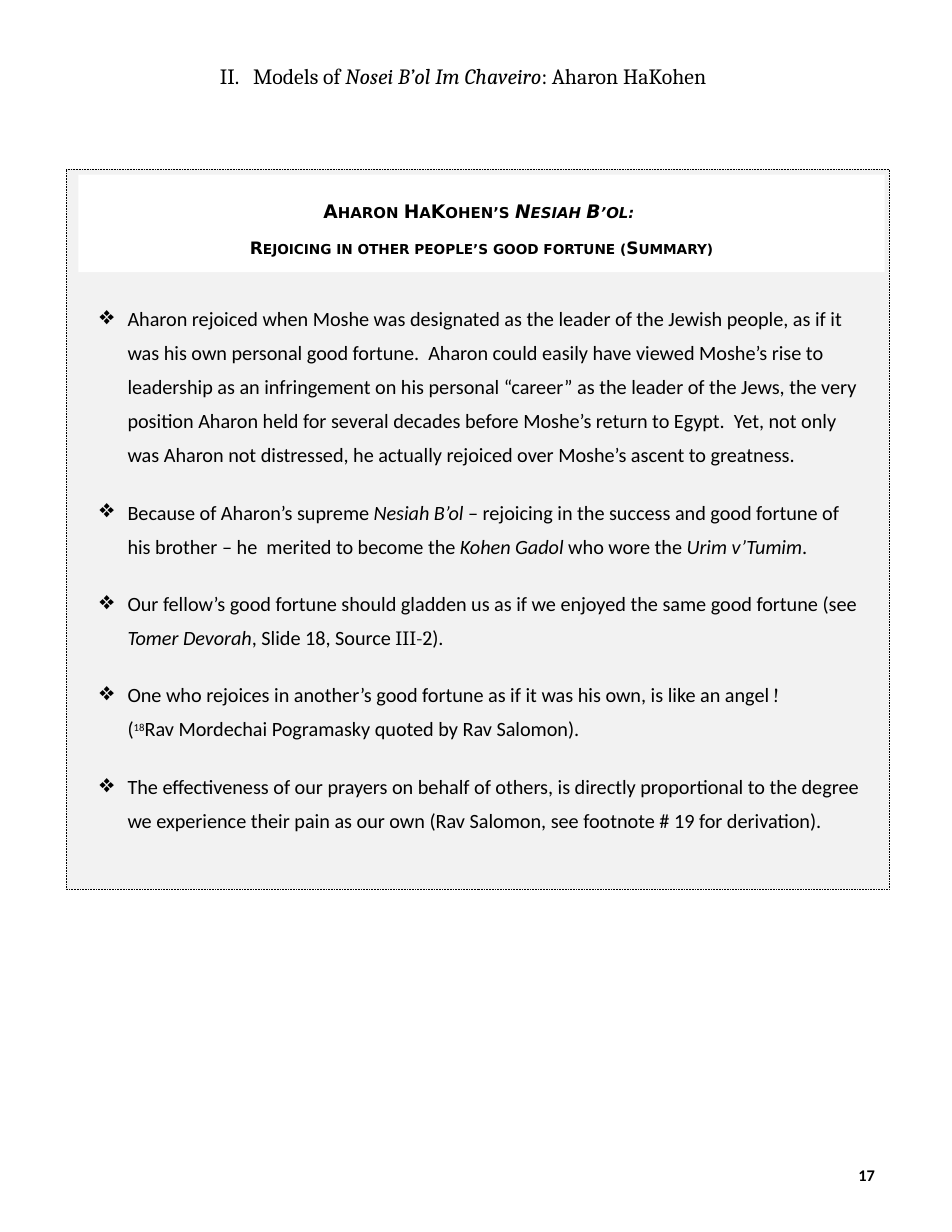
from lxml import etree
from pptx import Presentation
from pptx import util as u
from pptx.dml.color import RGBColor
from pptx.enum import dml, shapes, text
from pptx.oxml.ns import qn

INK = {"text": "000000", "panel": "F2F2F2", "band": "FFFFFF"}
SIDES = ("left", "top", "right", "bottom")
EM = {"italic": True}
SERIF = {"name": "Cambria"}
NOTE = {"size": 12, "baseline": "30000"}
BREAK = ("\n", {})

TITLE = [[("II.   Models of ", {}), ("Nosei B’ol Im Chaveiro", EM), (": Aharon HaKohen", {})]]
HEADS = [
    [("Aharon HaKohen’s ", {"size": 12}), ("Nesiah B’ol: ", {"size": 12, **EM})],
    [("Rejoicing in other people’s good fortune (Summary)", {"size": 11})],
]
POINTS = [
    [("Aharon rejoiced when Moshe was designated as the leader of the Jewish people, "
      "as if it was his own personal good fortune.  Aharon could easily have viewed "
      "Moshe’s rise to leadership as an infringement on his personal “career” as the "
      "leader of the Jews, the very position Aharon held for several decades before "
      "Moshe’s return to Egypt.  Yet, not only was Aharon not distressed, he actually "
      "rejoiced over Moshe’s ascent to greatness.", {})],
    [("Because of Aharon’s supreme ", {}), ("Nesiah B’ol ", EM),
     ("– rejoicing in the success and good fortune of his brother – he  merited to "
      "become the ", {}), ("Kohen Gadol ", EM), ("who wore the ", {}),
     ("Urim v’Tumim", EM), (".", {})],
    [("Our fellow’s good fortune should gladden us as if we enjoyed the same good "
      "fortune (see ", {}), ("Tomer Devorah", EM), (", Slide 18, Source ", {}),
     ("III-2", SERIF), (").", {})],
    [("One who rejoices in another’s good fortune as if it was his own, is like an "
      "angel ", {}), ("! ", SERIF), BREAK, ("(", {}), ("18", NOTE),
     ("Rav Mordechai Pogramasky quoted by Rav Salomon).", {})],
    [("The effectiveness of our prayers on behalf of others, is directly proportional "
      "to the degree we experience their pain as our own (Rav Salomon, see footnote "
      "# 19 for derivation).", {})],
]
PAGE = [[("17", {})]]


def color(key):
    return RGBColor.from_string(INK[key])


def style(obj, vals):
    for key, val in vals.items():
        setattr(obj, key, val)


def add_run(para, words, font):
    if words == "\n":
        para.add_line_break()
        return
    run = para.add_run()
    run.text = words
    run.font.color.rgb = color("text")
    for key, val in font.items():
        if key in ("baseline", "cap"):
            run._r.get_or_add_rPr().set(key, val)
        else:
            setattr(run.font, key, u.Pt(val) if key == "size" else val)


def fill_text(shape, paras, font, gaps, indent=(0, 0), bullet=None, **frame):
    box = shape.text_frame
    style(box, {"word_wrap": True, **frame})
    for i, runs in enumerate(paras):
        para = box.paragraphs[0] if i == 0 else box.add_paragraph()
        style(para, gaps[min(i, len(gaps) - 1)])
        props = para._p.get_or_add_pPr()
        for key, val in zip(("marL", "indent"), indent):
            props.set(key, str(u.Inches(val)))
        if bullet:
            etree.SubElement(props, qn("a:buSzPct")).set("val", "125000")
            etree.SubElement(props, qn("a:buChar")).set("char", bullet)
        for words, own in runs:
            add_run(para, words, {**font, **own})


def gap(line, before, after, align=text.PP_ALIGN.LEFT):
    return {"line_spacing": line, "space_before": u.Pt(before),
            "space_after": u.Pt(after), "alignment": align}


def add_box(slide, fill, *place):
    box = slide.shapes.add_shape(shapes.MSO_SHAPE.RECTANGLE, *map(u.Inches, place))
    box.shadow.inherit = False
    box.fill.solid()
    box.fill.fore_color.rgb = color(fill)
    box.line.fill.background()
    return box


def add_label(slide, *place):
    return slide.shapes.add_textbox(*map(u.Inches, place))


def main():
    deck = Presentation()
    style(deck, {"slide_width": u.Inches(8.5), "slide_height": u.Inches(11)})
    slide = deck.slides.add_slide(deck.slide_layouts[6])
    mid, top = text.MSO_ANCHOR.MIDDLE, text.MSO_ANCHOR.TOP
    center, right = text.PP_ALIGN.CENTER, text.PP_ALIGN.RIGHT

    page = add_label(slide, 6, 10.2, 1.91, 0.59)
    fill_text(page, PAGE, {"size": 10.5, "name": "Calibri", "bold": True},
              [gap(1, 0, 0, right)], vertical_anchor=mid)

    panel = add_box(slide, "panel", 0.59, 1.51, 7.35, 6.43)
    panel.line.color.rgb = color("text")
    style(panel.line, {"width": u.Pt(0.5), "dash_style": dml.MSO_LINE.ROUND_DOT})
    fill_text(panel, POINTS, {"size": 13, "name": "Calibri"},
              [gap(1.4, 0, 6), gap(1.4, 9, 6)], (0.45, -0.25), "❖",
              vertical_anchor=top, margin_top=u.Inches(1.14),
              margin_right=u.Inches(0.24))

    band = add_box(slide, "band", 0.7, 1.56, 7.2, 0.87)
    fill_text(band, HEADS,
              {"name": "DejaVu Sans", "bold": True, "cap": "small"},
              [gap(1.5, 6, 3, center), gap(1.5, 0, 12, center)],
              vertical_anchor=mid, **{f"margin_{side}": 0 for side in SIDES})

    title = add_label(slide, 0.88, 0.43, 6.21, 0.38)
    fill_text(title, TITLE, {"size": 14, "name": "Cambria"},
              [gap(1.35, 0, 6, center)], (0.3, 0),
              auto_size=text.MSO_AUTO_SIZE.SHAPE_TO_FIT_TEXT)

    deck.save("out.pptx")


if __name__ == "__main__":
    main()
